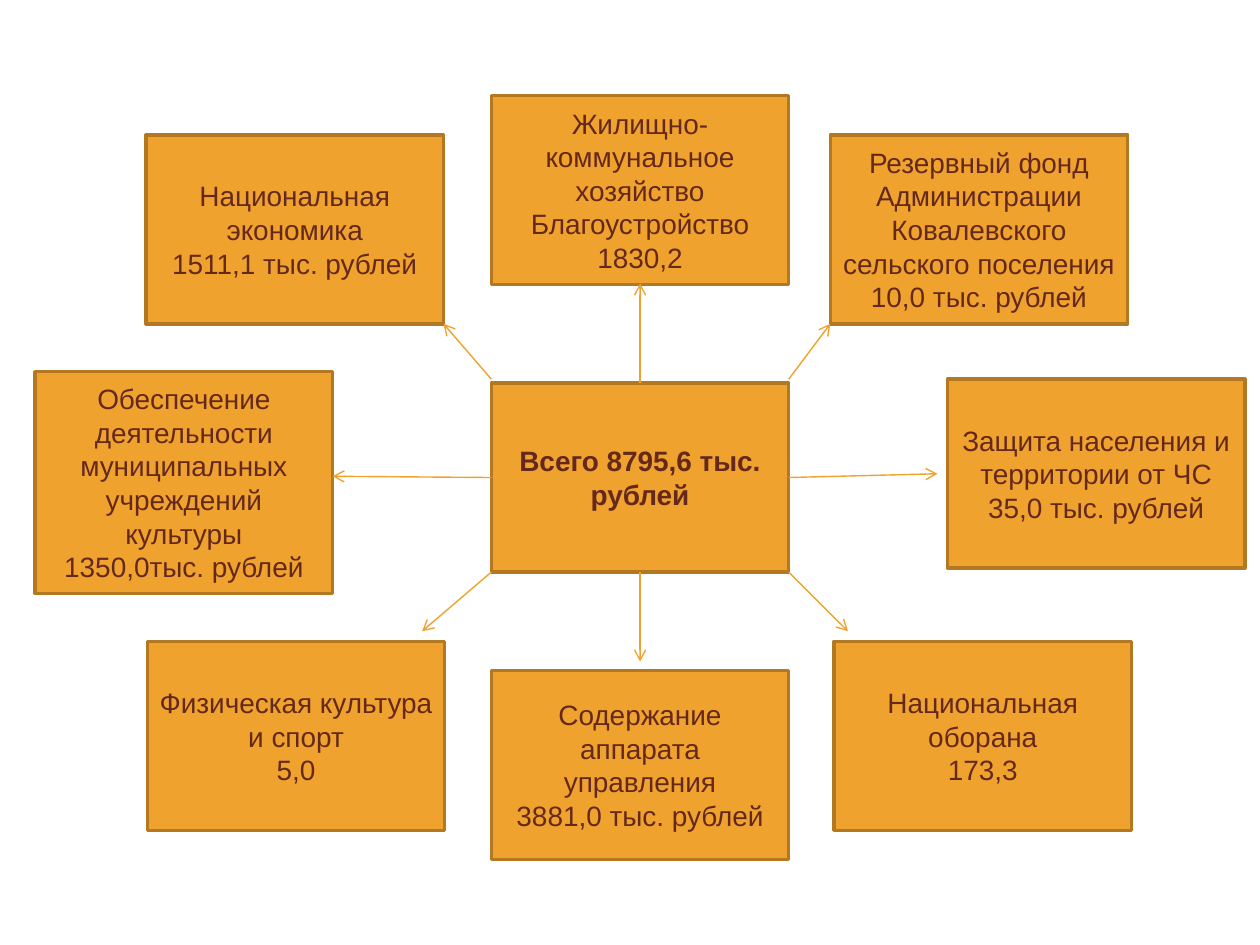
import pptx
import pptx.util
import pptx.dml.color
import pptx.enum.shapes
import pptx.enum.text
import pptx.oxml
import pptx.oxml.ns
import lxml.etree

Inches = pptx.util.Inches
Pt = pptx.util.Pt

COLORS = {"fill": "F0A22E", "edge": "B27822", "text": "65291B"}
FONT = {"name": "Arial", "size": Pt(16)}
FRAME = {
    "word_wrap": True,
    "vertical_anchor": pptx.enum.text.MSO_ANCHOR.MIDDLE,
    "margin_left": Inches(0.09),
    "margin_right": Inches(0.09),
}
WIDTH, HEIGHT = 2.36, 1.5
LEFT, TOP = 3.9, 3.04
RIGHT, BASE = LEFT + WIDTH, TOP + HEIGHT
MID_X, MID_Y = LEFT + WIDTH / 2, TOP + HEIGHT / 2

TOTAL = "Всего 8795,6 тыс. рублей"

# left, top, height, paragraphs; the culture box is taller to hold six lines
ITEMS = [
    (6.62, 5.09, HEIGHT, ["Национальная оборана", "173,3"]),
    (1.17, 5.09, HEIGHT, ["Физическая культура и спорт", "5,0"]),
    (7.52, 3.01, HEIGHT, ["Защита населения и территории от ЧС", "35,0 тыс. рублей"]),
    (0.28, 2.95, 1.76, ["Обеспечение деятельности муниципальных учреждений культуры",
                        "1350,0тыс. рублей"]),
    (1.16, 1.07, HEIGHT, ["Национальная экономика", "1511,1 тыс. рублей"]),
    (6.59, 1.07, HEIGHT, ["Резервный фонд Администрации Ковалевского сельского поселения",
                          "10,0 тыс. рублей"]),
    (LEFT, 0.76, HEIGHT, ["Жилищно-коммунальное хозяйство", "Благоустройство", "1830,2"]),
    (LEFT, 5.32, HEIGHT, ["Содержание аппарата управления", "3881,0 тыс. рублей"]),
]

# start and end of each arrow, from the total outwards
ARROWS = [
    ((MID_X, TOP), (MID_X, 2.25)),
    ((RIGHT, 3.01), (6.59, 2.57)),
    ((LEFT, 3.01), (3.52, 2.57)),
    ((RIGHT, MID_Y), (7.44, 3.76)),
    ((LEFT, MID_Y), (2.64, 3.78)),
    ((MID_X, BASE), (MID_X, 5.25)),
    ((RIGHT, BASE), (6.73, 5.01)),
    ((LEFT, BASE), (3.35, 5.01)),
]


def color(name):
    return pptx.dml.color.RGBColor.from_string(COLORS[name])


def assign(target, values):
    """Set each named attribute of the target."""
    for key, value in values.items():
        setattr(target, key, value)


def add_box(slide, left, top, height, lines, bold=False):
    kind = pptx.enum.shapes.MSO_SHAPE.FLOWCHART_PROCESS
    box = slide.shapes.add_shape(
        kind, Inches(left), Inches(top), Inches(WIDTH), Inches(height))
    box.shadow.inherit = False
    box.fill.solid()
    box.fill.fore_color.rgb = color("fill")
    box.line.color.rgb = color("edge")
    box.line.width = Pt(2)
    frame = box.text_frame
    assign(frame, FRAME)
    frame.text = "\n".join(lines)
    for para in frame.paragraphs:
        para.alignment = pptx.enum.text.PP_ALIGN.CENTER
        for run in para.runs:
            assign(run.font, FONT)
            run.font.bold = bold
            run.font.color.rgb = color("text")


def add_arrow(slide, start, end):
    kind = pptx.enum.shapes.MSO_CONNECTOR.STRAIGHT
    points = [Inches(value) for value in start + end]
    arrow = slide.shapes.add_connector(kind, *points)
    arrow.line.color.rgb = color("fill")
    arrow.line.width = Pt(0.79)
    tag = pptx.oxml.ns.qn
    props = arrow.element.spPr
    tip = lxml.etree.SubElement(props.find(tag("a:ln")), tag("a:tailEnd"))
    tip.set("type", "arrow")
    lxml.etree.SubElement(props, tag("a:effectLst"))


def main():
    deck = pptx.Presentation()
    deck.slide_width, deck.slide_height = Inches(10), Inches(7.5)
    slide = deck.slides.add_slide(deck.slide_layouts[6])
    add_box(slide, LEFT, TOP, HEIGHT, [TOTAL], bold=True)
    for item in ITEMS:
        add_box(slide, *item)
    for start, end in ARROWS:
        add_arrow(slide, start, end)
    deck.save("out.pptx")


if __name__ == "__main__":
    main()
